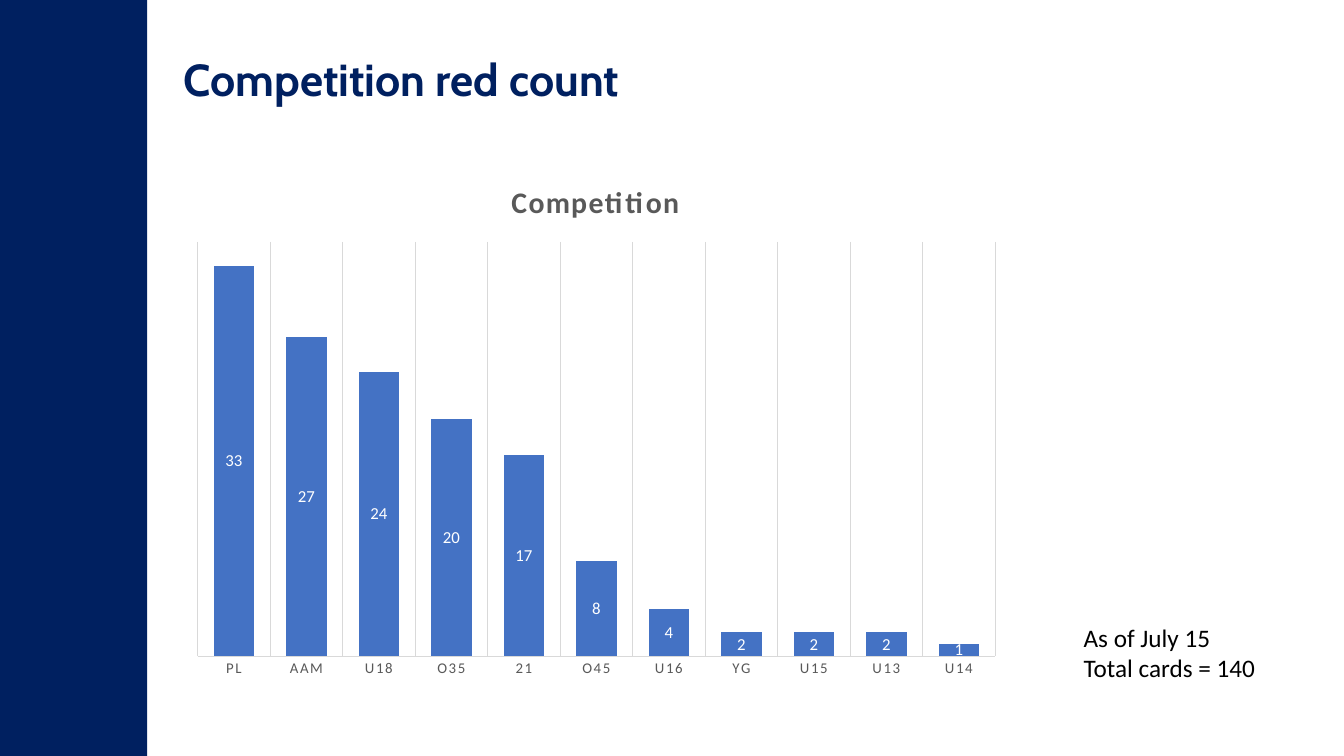
"""Builds the slide with the red card count per competition."""
from lxml.etree import SubElement
from pptx import Presentation
from pptx.chart.data import CategoryChartData
from pptx.dml.color import RGBColor
from pptx.enum.chart import XL_CHART_TYPE, XL_LABEL_POSITION, XL_TICK_LABEL_POSITION, XL_TICK_MARK
from pptx.enum.shapes import MSO_SHAPE
from pptx.enum.text import MSO_ANCHOR, PP_ALIGN
from pptx.oxml.ns import qn
from pptx.util import Inches, Pt

NAVY = RGBColor(0x00, 0x20, 0x60)
BLUE = RGBColor(0x44, 0x72, 0xC4)
BLACK = RGBColor(0x00, 0x00, 0x00)
WHITE = RGBColor(0xFF, 0xFF, 0xFF)
GRAY = RGBColor(0x59, 0x59, 0x59)
LIGHT_GRAY = RGBColor(0xD9, 0xD9, 0xD9)

CHART_WIDTH, CHART_HEIGHT = 8.23, 5.23
RED_CARDS = {"PL": 33, "AAM": 27, "U18": 24, "O35": 20, "21": 17, "O45": 8,
             "U16": 4, "YG": 2, "U15": 2, "U13": 2, "U14": 1}


def write(frame, lines, size, color, name="Calibri", bold=False):
    """Fills a text frame with one left-aligned paragraph per line."""
    frame.word_wrap = True
    frame.vertical_anchor = MSO_ANCHOR.TOP
    frame.text = "\n".join(lines)
    for para in frame.paragraphs:
        para.alignment = PP_ALIGN.LEFT
        para.line_spacing = 1.0
        for span in para.runs:
            style(span.font, size, color, name, bold)


def style(font, size, color, name="Calibri", bold=False):
    """Sets size, colour, typeface and weight of a font."""
    font.size, font.name, font.bold = Pt(size), name, bold
    font.color.rgb = color


deck = Presentation()
deck.slide_width, deck.slide_height = Inches(13.33), Inches(7.5)
page = deck.slides.add_slide(deck.slide_layouts[5])

band = page.shapes.add_shape(MSO_SHAPE.RECTANGLE, 0, 0, Inches(1.46), deck.slide_height)
band.shadow.inherit = False
band.fill.solid()
band.fill.fore_color.rgb = NAVY
band.line.fill.background()

title = page.shapes.title
title.left, title.top, title.width, title.height = map(Inches, (1.72, 0.46, 9.94, 0.64))
write(title.text_frame, ["Competition red count"], 32, NAVY, name="Cabin", bold=True)

data = CategoryChartData()
data.categories = list(RED_CARDS)
data.add_series("Series 1", list(RED_CARDS.values()))
chart = page.shapes.add_chart(XL_CHART_TYPE.COLUMN_STACKED, Inches(1.8), Inches(1.6),
                              Inches(CHART_WIDTH), Inches(CHART_HEIGHT), data).chart
style(chart.font, 10, BLACK)
chart.has_legend = False
chart.has_title = True
heading = chart.chart_title.text_frame
heading.text = "Competition"
style(heading.paragraphs[0].runs[0].font, 21.3, GRAY, bold=True)

plot = chart.plots[0]
plot.gap_width, plot.overlap, plot.vary_by_categories = 79, 100, False
bars = plot.series[0]
bars.format.fill.solid()
bars.format.fill.fore_color.rgb = BLUE
plot.has_data_labels = True
plot.data_labels.show_value = True
plot.data_labels.position = XL_LABEL_POSITION.CENTER
style(plot.data_labels.font, 12, WHITE)

competitions = chart.category_axis
competitions.major_tick_mark = XL_TICK_MARK.NONE
competitions.tick_label_position = XL_TICK_LABEL_POSITION.NEXT_TO_AXIS
competitions.has_major_gridlines = True
style(competitions.tick_labels.font, 10.6, GRAY)
competitions.tick_labels.offset = 100
for line in (competitions.format.line, competitions.major_gridlines.format.line):
    line.color.rgb = LIGHT_GRAY
    line.width = Pt(0.75)

counts = chart.value_axis
counts.minimum_scale, counts.maximum_scale = 0, 35
counts.major_tick_mark = XL_TICK_MARK.NONE
counts.has_major_gridlines = False
counts.visible = False

for run_properties in chart.element.xpath(".//c:title//a:rPr"):
    run_properties.set("spc", "110")
for run_properties in chart.element.xpath(".//c:catAx/c:txPr//a:defRPr"):
    run_properties.set("spc", "120")

edges = {"xMode": "edge", "yMode": "edge"}
placements = {
    "c:title": (1, {**edges, "x": 3.22 / CHART_WIDTH, "y": 0.15 / CHART_HEIGHT}),
    "c:plotArea": (0, {"layoutTarget": "inner", **edges,
                       "x": 0.16 / CHART_WIDTH, "y": 0.8 / CHART_HEIGHT,
                       "w": 7.91 / CHART_WIDTH, "h": 4.11 / CHART_HEIGHT}),
}
for tag, (position, settings) in placements.items():
    parent = chart.element.xpath(f"c:chart/{tag}")[0]
    for old_layout in parent.findall(qn("c:layout")):
        parent.remove(old_layout)
    layout = SubElement(parent, qn("c:layout"))
    manual = SubElement(layout, qn("c:manualLayout"))
    for key, value in settings.items():
        SubElement(manual, qn(f"c:{key}")).set("val", str(value))
    parent.insert(position, layout)

note = page.shapes.add_textbox(*map(Inches, (10.65, 6.12, 2.34, 0.71)))
write(note.text_frame, ["As of July 15", "Total cards = 140"], 18, BLACK)

deck.save("out.pptx")
